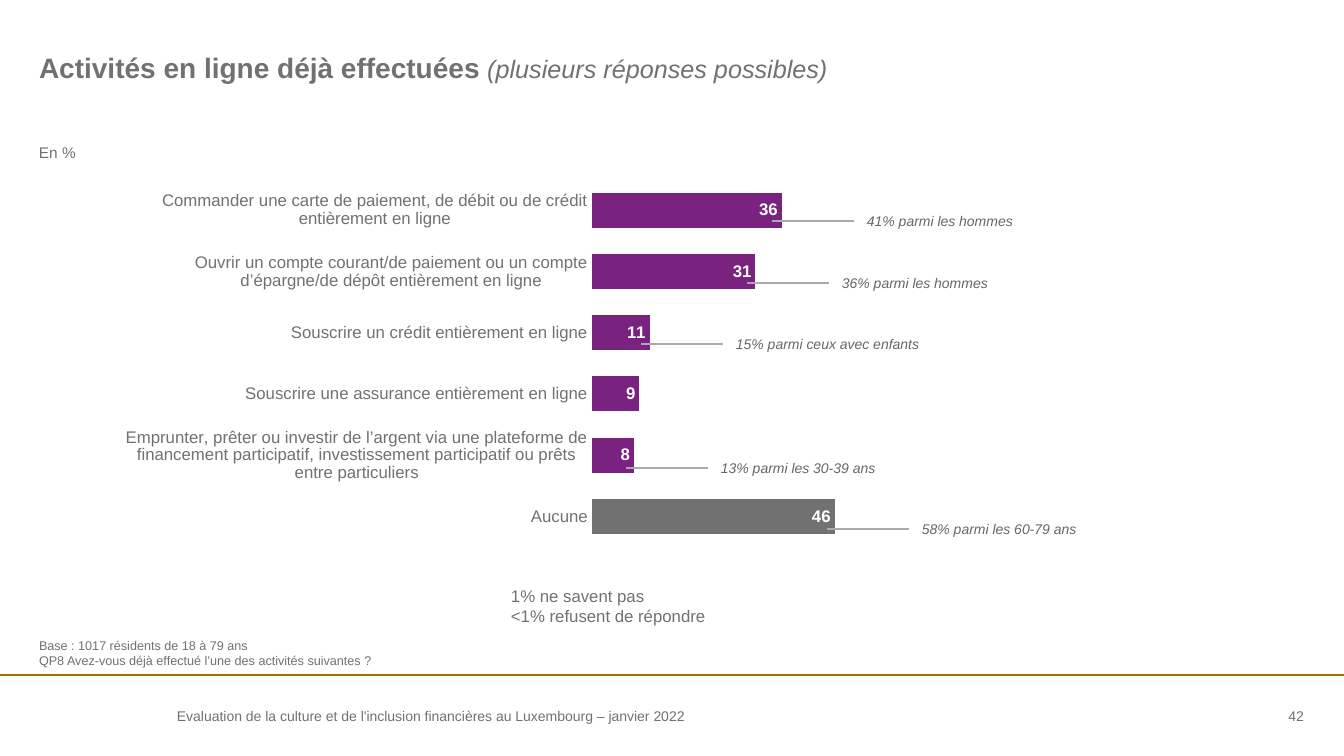
from dataclasses import dataclass

from lxml import etree
from pptx import Presentation, util as u
from pptx.chart import data as chart_data
from pptx.dml import color
from pptx.enum import chart as charts, shapes, text
from pptx.oxml import ns


@dataclass(frozen=True)
class Theme:
    font: str = "Arial"
    grey: str = "717171"
    note_grey: str = "666666"
    leader: str = "AAAAAA"
    purple: str = "7A2280"
    gold: str = "9C7200"
    white: str = "FFFFFF"
    title: int = 20
    subtitle: int = 18
    label: int = 12
    unit: int = 11
    small: int = 10
    base: int = 9


class SlideBuilder:
    SCALE = 914400 / 100.8

    def __init__(self, presentation, theme):
        self.theme = theme
        presentation.slide_width = self.px(1344)
        presentation.slide_height = self.px(756)
        self.slide = presentation.slides.add_slide(presentation.slide_layouts[5])

    def px(self, length):
        return u.Emu(round(length * self.SCALE))

    def box(self, bounds):
        return [self.px(length) for length in bounds]

    def style(self, font, size, rgb, bold=False, italic=False):
        font.name = self.theme.font
        font.size = u.Pt(size)
        font.color.rgb = color.RGBColor.from_string(rgb)
        font.bold = bold
        font.italic = italic

    def frame(self, shape, insets, anchor):
        frame = shape.text_frame
        frame.word_wrap = True
        frame.auto_size = text.MSO_AUTO_SIZE.NONE
        frame.vertical_anchor = anchor
        frame.margin_left, frame.margin_top, frame.margin_right, frame.margin_bottom = self.box(insets)
        return frame

    def title(self, bounds, main, aside):
        shape = self.slide.shapes.title
        shape.left, shape.top, shape.width, shape.height = self.box(bounds)
        frame = self.frame(shape, (0, 0, 0, 0), text.MSO_ANCHOR.TOP)
        paragraph = frame.paragraphs[0]
        paragraph.alignment = text.PP_ALIGN.LEFT
        run = paragraph.add_run()
        run.text = main
        self.style(run.font, self.theme.title, self.theme.grey, bold=True)
        run = paragraph.add_run()
        run.text = aside
        self.style(run.font, self.theme.subtitle, self.theme.grey, italic=True)

    def text(self, bounds, lines, size, rgb=None, italic=False, insets=(0, 0, 0, 0),
             anchor=text.MSO_ANCHOR.TOP, align=text.PP_ALIGN.LEFT):
        shape = self.slide.shapes.add_textbox(*self.box(bounds))
        frame = self.frame(shape, insets, anchor)
        for index, line in enumerate(lines):
            paragraph = frame.add_paragraph() if index else frame.paragraphs[0]
            paragraph.alignment = align
            run = paragraph.add_run()
            run.text = line
            self.style(run.font, size, rgb or self.theme.grey, italic=italic)

    def line(self, start, end, rgb, width):
        line = self.slide.shapes.add_connector(
            shapes.MSO_CONNECTOR.STRAIGHT, *self.box(start + end))
        line.line.color.rgb = color.RGBColor.from_string(rgb)
        line.line.width = u.Pt(width)
        etree.SubElement(line._element.spPr, ns.qn("a:effectLst"))

    def callout(self, left, middle, note):
        self.line((left + 82, middle), (left, middle), self.theme.leader, 1)
        self.text((left + 91, middle - 12, 282, 25), [note], self.theme.small,
                  self.theme.note_grey, italic=True, insets=(4, 4, 8, 4))

    def bar_chart(self, bounds, values, maximum, plot, highlight):
        data = chart_data.CategoryChartData()
        data.categories = list(values)
        data.add_series("Series 1", list(values.values()))
        chart = self.slide.shapes.add_chart(
            charts.XL_CHART_TYPE.BAR_CLUSTERED, *self.box(bounds), data).chart
        chart.has_legend = False
        chart.has_title = False
        self.style(chart.font, self.theme.small, self.theme.grey)

        categories = chart.category_axis
        categories.reverse_order = True
        categories.major_tick_mark = charts.XL_TICK_MARK.NONE
        categories.format.line.fill.background()
        self.style(categories.tick_labels.font, self.theme.label, self.theme.grey)
        scale = chart.value_axis
        scale.minimum_scale, scale.maximum_scale = 0, maximum
        scale.has_major_gridlines = False
        scale.visible = False

        bars = chart.plots[0]
        bars.gap_width = 75
        bars.vary_by_categories = False
        series = bars.series[0]
        series.invert_if_negative = False
        series.format.fill.solid()
        series.format.fill.fore_color.rgb = color.RGBColor.from_string(self.theme.purple)
        fill = series.points[highlight].format.fill
        fill.solid()
        fill.fore_color.rgb = color.RGBColor.from_string(self.theme.grey)
        labels = series.data_labels
        labels.show_value = True
        labels.position = charts.XL_LABEL_POSITION.INSIDE_END
        self.style(labels.font, self.theme.label, self.theme.white, bold=True)
        self.place_plot(chart, plot)

    def place_plot(self, chart, plot):
        area = chart._chartSpace.chart.plotArea
        for old in area.findall(ns.qn("c:layout")):
            area.remove(old)
        layout = etree.Element(ns.qn("c:layout"))
        area.insert(0, layout)
        manual = etree.SubElement(layout, ns.qn("c:manualLayout"))
        settings = {"layoutTarget": "inner", "xMode": "edge", "yMode": "edge"}
        settings.update(zip("xywh", plot))
        for name, value in settings.items():
            etree.SubElement(manual, ns.qn(f"c:{name}")).set("val", str(value))


ACTIVITIES = {
    "Commander une carte de paiement, de débit ou de crédit entièrement en ligne": 36,
    "Ouvrir un compte courant/de paiement ou un compte d’épargne/de dépôt entièrement en ligne": 31,
    "Souscrire un crédit entièrement en ligne": 11,
    "Souscrire une assurance entièrement en ligne": 9,
    "Emprunter, prêter ou investir de l’argent via une plateforme de financement participatif, "
    "investissement participatif ou prêts entre particuliers": 8,
    "Aucune": 46,
}
CALLOUTS = [
    (0, 772, "41% parmi les hommes"),
    (1, 747, "36% parmi les hommes"),
    (2, 641, "15% parmi ceux avec enfants"),
    (4, 626, "13% parmi les 30-39 ans"),
    (5, 827, "58% parmi les 60-79 ans"),
]


def main():
    presentation = Presentation()
    theme = Theme()
    builder = SlideBuilder(presentation, theme)
    middle = text.MSO_ANCHOR.MIDDLE

    builder.line((0, 675), (1344, 675), theme.gold, 1.5)
    builder.text((167, 705, 539, 22),
                 ["Evaluation de la culture et de l'inclusion financières au Luxembourg – janvier 2022"],
                 theme.small, insets=(10, 5, 10, 5), anchor=middle)
    builder.title((39, 50, 1264, 44), "Activités en ligne déjà effectuées",
                  " (plusieurs réponses possibles)")
    builder.text((39, 637, 1264, 31),
                 ["Base : 1017 résidents de 18 à 79 ans",
                  "QP8 Avez-vous déjà effectué l’une des activités suivantes ?"],
                 theme.base, anchor=text.MSO_ANCHOR.BOTTOM)
    builder.bar_chart((111, 172, 956, 379), ACTIVITIES, 90, (0.503, 0.02, 0.497, 0.97), 5)
    builder.text((511, 586, 224, 40), ["1% ne savent pas", "<1% refusent de répondre"], theme.label)
    builder.text((39, 143, 50, 19), ["En %"], theme.unit)
    for row, left, note in CALLOUTS:
        builder.callout(left, 221 + round(row * 61.7), note)
    builder.text((1197, 705, 107, 22), ["42"], theme.small, anchor=middle,
                 align=text.PP_ALIGN.RIGHT)
    presentation.save("out.pptx")


if __name__ == "__main__":
    main()
